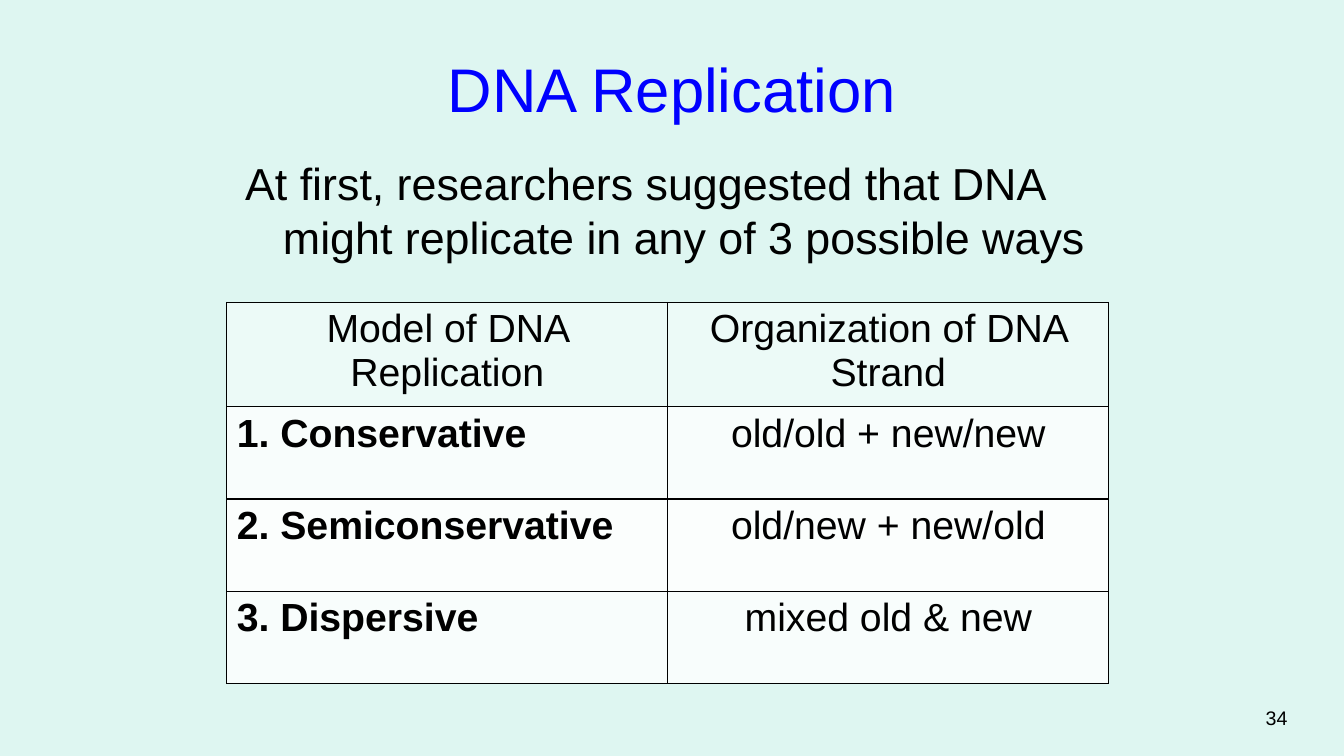
from dataclasses import dataclass
from typing import Any

from lxml import etree
from pptx import Presentation
from pptx.dml.color import RGBColor
from pptx.enum.text import MSO_ANCHOR, MSO_AUTO_SIZE, PP_ALIGN
from pptx.oxml.ns import qn
from pptx.util import Pt

LEFT, CENTER = PP_ALIGN.LEFT, PP_ALIGN.CENTER
TOP, MIDDLE = MSO_ANCHOR.TOP, MSO_ANCHOR.MIDDLE
FIT_SHAPE = MSO_AUTO_SIZE.SHAPE_TO_FIT_TEXT
NO_FIT = MSO_AUTO_SIZE.NONE

COLORS = {
    "background": "DEF6F1",
    "title": "0000FF",
    "text": "000000",
    "border": "000000",
    "header": "ECFAF7",
    "odd_row": "F8FDFC",
    "even_row": "FBFEFD",
}
FONT = "Arial"
TABLE_LEFT, TABLE_TOP = 162, 216
COLUMN_WIDTH = 315
HEADER_HEIGHT, ROW_HEIGHT = 74.4, 66
TABLE_TEXT_SIZE = 28
BORDER_TAGS = ("a:lnL", "a:lnR", "a:lnT", "a:lnB")


@dataclass
class TextBox:
    text: str
    left: float
    top: float
    width: float
    height: float
    size: float
    color: str = "text"
    align: Any = LEFT
    anchor: Any = TOP
    wrap: bool = True
    auto_size: Any = NO_FIT
    hanging: float = 0


@dataclass
class ModelRow:
    model: str
    strands: str
    fill: str
    height: float = ROW_HEIGHT
    model_align: Any = LEFT
    model_bold: bool = True


TEXT_BOXES = [
    TextBox("34", 897, 500.4, 31.7, 24.5, 14, wrap=False, auto_size=FIT_SHAPE),
    TextBox("DNA Replication", 144, 18, 672, 90, 44, "title", CENTER, MIDDLE),
    TextBox("At first, researchers suggested that DNA might replicate in any of 3 possible ways",
            168, 108, 630, 90, 32, hanging=27),
]
MODEL_ROWS = [
    ModelRow("Model of DNA Replication", "Organization of DNA Strand", "header",
             HEADER_HEIGHT, CENTER, False),
    ModelRow("1. Conservative", "old/old + new/new", "odd_row"),
    ModelRow("2. Semiconservative", "old/new + new/old", "even_row"),
    ModelRow("3. Dispersive", "mixed old & new", "odd_row"),
]


def set_attributes(target: Any, values: dict[str, Any]) -> None:
    for name, value in values.items():
        setattr(target, name, value)


def write_text(frame: Any, text: str, size: float, color: str, align: Any,
               bold: bool = False) -> Any:
    """Fill the first paragraph of a text frame and return it."""
    paragraph = frame.paragraphs[0]
    paragraph.alignment = align
    run = paragraph.add_run()
    run.text = text
    set_attributes(run.font, {"name": FONT, "size": Pt(size), "bold": bold})
    run.font.color.rgb = RGBColor.from_string(COLORS[color])
    return paragraph


def add_text_box(slide: Any, box: TextBox) -> None:
    shape = slide.shapes.add_textbox(Pt(box.left), Pt(box.top), Pt(box.width), Pt(box.height))
    frame = shape.text_frame
    set_attributes(frame, {"word_wrap": box.wrap, "auto_size": box.auto_size,
                           "vertical_anchor": box.anchor})
    paragraph = write_text(frame, box.text, box.size, box.color, box.align)
    if box.hanging:
        properties = paragraph._p.get_or_add_pPr()
        properties.set("marL", str(Pt(box.hanging)))
        properties.set("indent", str(-Pt(box.hanging)))


def add_borders(cell: Any) -> None:
    """Insert the border lines ahead of the cell fill, as the schema requires."""
    properties = cell._tc.get_or_add_tcPr()
    for index, tag in enumerate(BORDER_TAGS):
        line = etree.Element(qn(tag), w=str(Pt(1)))
        fill = etree.SubElement(line, qn("a:solidFill"))
        etree.SubElement(fill, qn("a:srgbClr"), val=COLORS["border"])
        properties.insert(index, line)


def add_model_table(slide: Any, rows: list[ModelRow]) -> None:
    total_height = sum(row.height for row in rows)
    frame = slide.shapes.add_table(len(rows), 2, Pt(TABLE_LEFT), Pt(TABLE_TOP),
                                   Pt(2 * COLUMN_WIDTH), Pt(total_height))
    table = frame.table
    for column in table.columns:
        column.width = Pt(COLUMN_WIDTH)
    for row_index, row in enumerate(rows):
        table.rows[row_index].height = Pt(row.height)
        entries = [(row.model, row.model_align, row.model_bold), (row.strands, CENTER, False)]
        for column_index, (text, align, bold) in enumerate(entries):
            cell = table.cell(row_index, column_index)
            cell.fill.solid()
            cell.fill.fore_color.rgb = RGBColor.from_string(COLORS[row.fill])
            write_text(cell.text_frame, text, TABLE_TEXT_SIZE, "text", align, bold)
            add_borders(cell)


def main() -> None:
    presentation = Presentation()
    set_attributes(presentation, {"slide_width": Pt(960), "slide_height": Pt(540)})
    slide = presentation.slides.add_slide(presentation.slide_layouts[6])
    slide.background.fill.solid()
    slide.background.fill.fore_color.rgb = RGBColor.from_string(COLORS["background"])
    for box in TEXT_BOXES:
        add_text_box(slide, box)
    add_model_table(slide, MODEL_ROWS)
    presentation.save("out.pptx")


if __name__ == "__main__":
    main()
